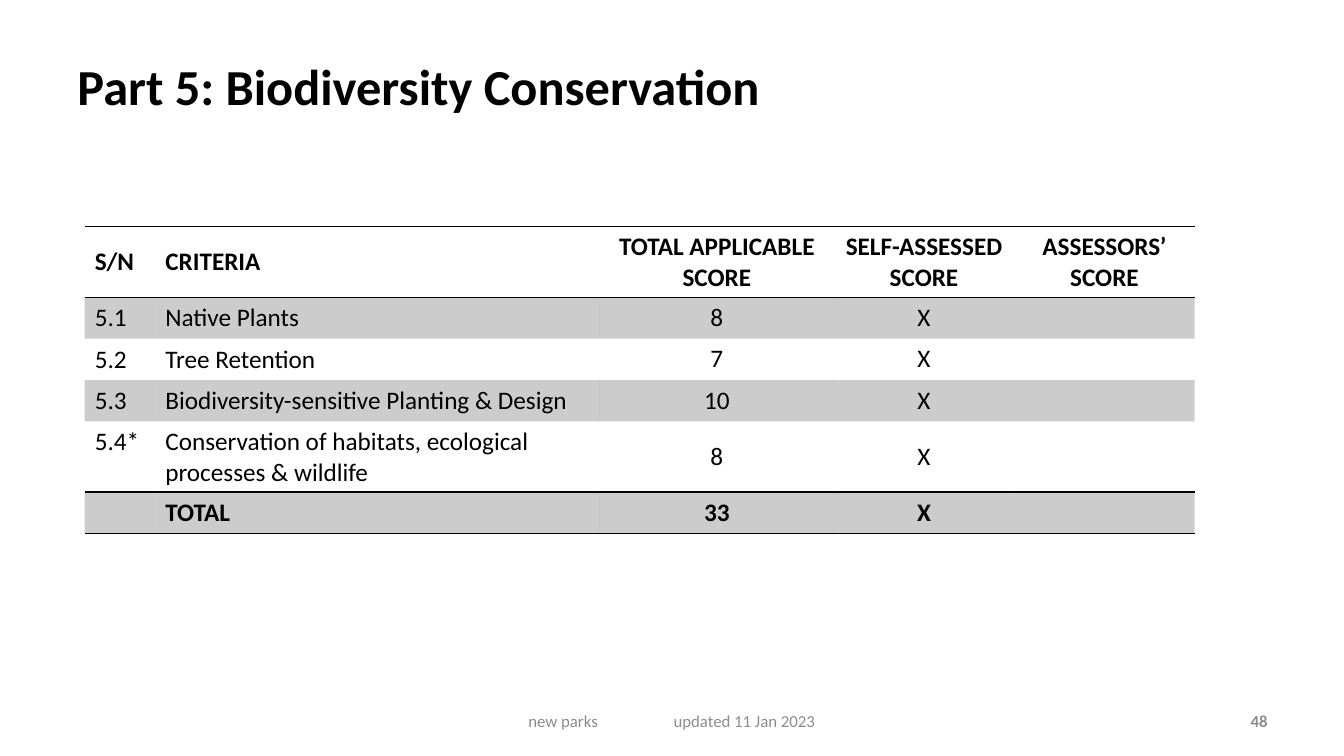
from dataclasses import dataclass

from lxml.etree import SubElement
from pptx import Presentation
from pptx.dml.color import RGBColor
from pptx.enum.text import MSO_ANCHOR as Anchor, PP_ALIGN as Align
from pptx.oxml.ns import qn
from pptx.util import Inches, Pt

COLORS = {"text": "000000", "muted": "8C8C8C", "band": "000000", "rule": "000000"}
FONT = "Calibri"
NO_GRID_STYLE = "{2D5ABB26-0587-4C30-8999-92F81FD0307C}"
BAND_OPACITY = 20
COLUMN_WIDTHS = (0.7, 4.41, 2.32, 1.79, 1.79)
SINGLE_LINE, DOUBLE_LINE = 0.41, 0.7


@dataclass(frozen=True)
class Label:
    text: str
    left: float
    top: float
    width: float
    height: float
    size: float
    color: str = "text"
    bold: bool = False
    align: Align = Align.LEFT
    margin_left: float = 0.1
    tab: float = 0


@dataclass(frozen=True)
class ScoreRow:
    texts: tuple[str, ...]
    height: float = SINGLE_LINE
    bold: bool = False
    banded: bool = False
    rules: tuple[str, ...] = ()
    anchors: tuple[Anchor, Anchor] = (Anchor.BOTTOM, Anchor.BOTTOM)


MIDDLE = (Anchor.MIDDLE, Anchor.MIDDLE)
LABELS = (
    Label("Part 5: Biodiversity Conservation", 0.67, 0.3, 10.36, 1.09, 36, bold=True),
    Label("new parks\tupdated 11 Jan 2023", 4.56, 6.95, 4.22, 0.4, 12, "muted",
          margin_left=0.68, tab=1.44),
    Label("48", 9.56, 6.95, 3.11, 0.4, 12, "muted", bold=True, align=Align.RIGHT),
)
SCORE_ROWS = (
    ScoreRow(("S/N", "CRITERIA", "TOTAL APPLICABLE SCORE", "SELF-ASSESSED SCORE",
              "ASSESSORS’ SCORE"),
             DOUBLE_LINE, bold=True, rules=("lnT", "lnB"), anchors=MIDDLE),
    ScoreRow(("5.1", "Native Plants", "8", "X", ""), banded=True),
    ScoreRow(("5.2", "Tree Retention", "7", "X", "")),
    ScoreRow(("5.3", "Biodiversity-sensitive Planting & Design", "10", "X", ""), banded=True),
    ScoreRow(("5.4*", "Conservation of habitats, ecological processes & wildlife",
              "8", "X", ""),
             DOUBLE_LINE, rules=("lnB",), anchors=(Anchor.TOP, Anchor.BOTTOM)),
    ScoreRow(("", "TOTAL", "33", "X", ""),
             bold=True, banded=True, rules=("lnT", "lnB"), anchors=MIDDLE),
)


def set_attributes(target, formats: dict) -> None:
    for name, value in formats.items():
        setattr(target, name, value)


def format_paragraph(paragraph, size: float, color: str, bold: bool, align: Align) -> None:
    paragraph.alignment = align
    set_attributes(paragraph.font, {"name": FONT, "size": Pt(size), "bold": bold})
    paragraph.font.color.rgb = RGBColor.from_string(COLORS[color])


def add_label(slide, label: Label) -> None:
    box = slide.shapes.add_textbox(*map(Inches, (label.left, label.top,
                                                 label.width, label.height)))
    frame = box.text_frame
    set_attributes(frame, {"word_wrap": True, "vertical_anchor": Anchor.MIDDLE,
                           "margin_left": Inches(label.margin_left)})
    paragraph = frame.paragraphs[0]
    paragraph.text = label.text
    if label.tab:
        tabs = SubElement(paragraph._p.get_or_add_pPr(), qn("a:tabLst"))
        SubElement(tabs, qn("a:tab"), pos=str(Inches(label.tab)), algn="l")
    format_paragraph(paragraph, label.size, label.color, label.bold, label.align)


def add_rule(cell, side: str) -> None:
    """Draw a one-point border on the side named by its XML tag."""
    line = SubElement(cell._tc.get_or_add_tcPr(), qn(f"a:{side}"), w=str(Pt(1)))
    fill = SubElement(line, qn("a:solidFill"))
    SubElement(fill, qn("a:srgbClr"), val=COLORS["rule"])


def fill_cell(cell, banded: bool) -> None:
    if not banded:
        cell.fill.background()
        return
    cell.fill.solid()
    cell.fill.fore_color.rgb = RGBColor.from_string(COLORS["band"])
    color = cell._tc.tcPr.find(f"{qn('a:solidFill')}/{qn('a:srgbClr')}")
    SubElement(color, qn("a:alpha"), val=str(BAND_OPACITY * 1000))


def add_score_table(slide, rows: tuple[ScoreRow, ...]) -> None:
    height = sum(row.height for row in rows)
    frame = slide.shapes.add_table(len(rows), len(COLUMN_WIDTHS), Inches(0.84), Inches(2.25),
                                   Inches(sum(COLUMN_WIDTHS)), Inches(height))
    table = frame.table
    set_attributes(table, {"first_row": False, "horz_banding": False})
    table._tbl.tblPr.find(qn("a:tableStyleId")).text = NO_GRID_STYLE
    for column, width in zip(table.columns, COLUMN_WIDTHS):
        column.width = Inches(width)
    for table_row, row in zip(table.rows, rows):
        table_row.height = Inches(row.height)
        for index, (cell, text) in enumerate(zip(table_row.cells, row.texts)):
            is_score = index >= len(row.anchors)
            cell.text = text
            cell.vertical_anchor = Anchor.MIDDLE if is_score else row.anchors[index]
            format_paragraph(cell.text_frame.paragraphs[0], 18, "text", row.bold,
                             Align.CENTER if is_score else Align.LEFT)
            for side in row.rules:
                add_rule(cell, side)
            fill_cell(cell, row.banded)


def main() -> None:
    presentation = Presentation()
    set_attributes(presentation, {"slide_width": Inches(13.33), "slide_height": Inches(7.5)})
    slide = presentation.slides.add_slide(presentation.slide_layouts[6])
    for label in LABELS:
        add_label(slide, label)
    add_score_table(slide, SCORE_ROWS)
    presentation.save("out.pptx")


if __name__ == "__main__":
    main()
